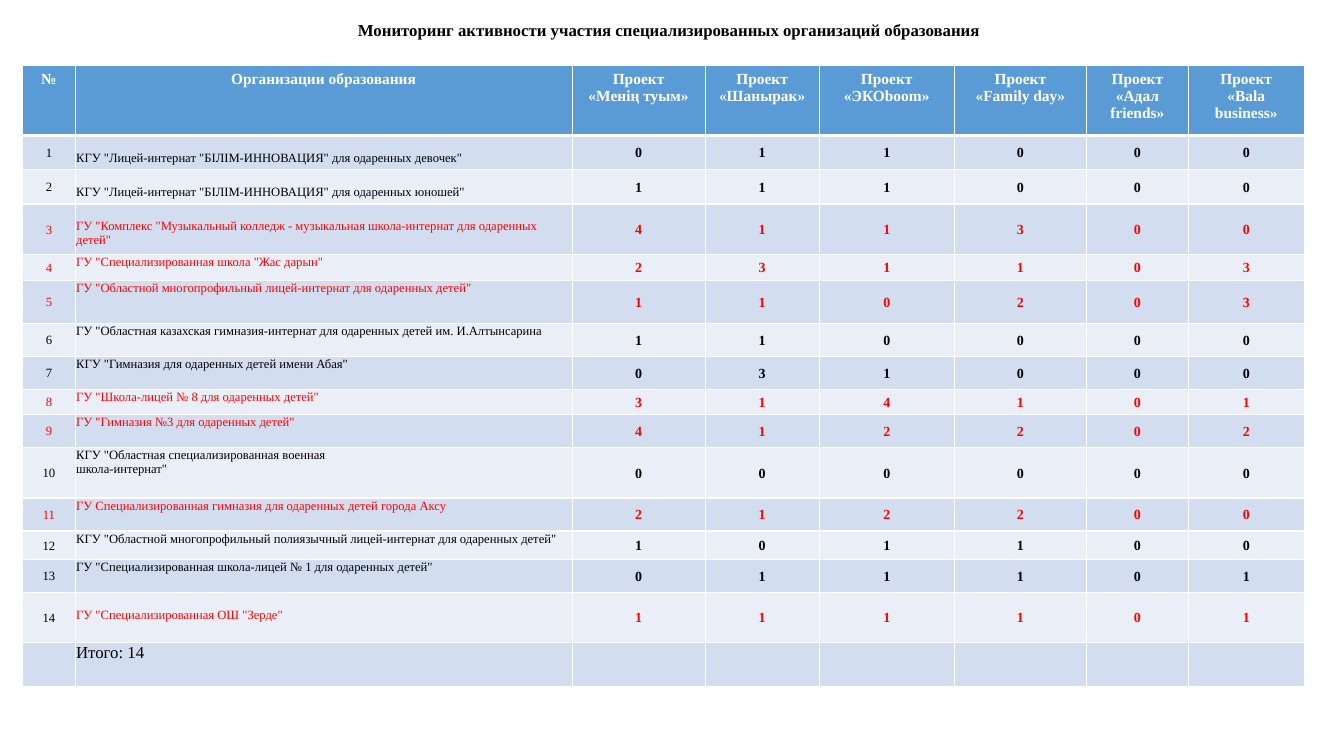
from lxml.etree import SubElement
from pptx import Presentation
from pptx.dml.color import RGBColor
from pptx.enum.text import MSO_ANCHOR, PP_ALIGN
from pptx.oxml.ns import qn
from pptx.util import Pt

FONT = "Times New Roman"
BLACK, RED, WHITE = "000000", "FF0000", "FFFFFF"
HEADER_BLUE, BAND_DARK, BAND_LIGHT = "5B9BD5", "D2DEEF", "EAEFF7"


def style_text(frame, size, color, bold=False, align=PP_ALIGN.CENTER):
    for paragraph in frame.paragraphs:
        paragraph.alignment = align
        paragraph.font.name = FONT
        paragraph.font.size = Pt(size)
        paragraph.font.bold = bold
        paragraph.font.color.rgb = RGBColor.from_string(color)


def style_cell(cell, fill, top=1, bottom=1):
    properties = cell._tc.get_or_add_tcPr()
    for side, width in (("L", 1), ("R", 1), ("T", top), ("B", bottom)):
        line = SubElement(properties, qn(f"a:ln{side}"), w=str(Pt(width)))
        solid = SubElement(line, qn("a:solidFill"))
        SubElement(solid, qn("a:srgbClr"), val=WHITE)
    cell.fill.solid()
    cell.fill.fore_color.rgb = RGBColor.from_string(fill)


headers = [
    "№", "Организации образования", "Проект\n«Менің туым»", "Проект «Шанырак»",
    "Проект «ЭКОboom»", "Проект\n«Family day»", "Проект\n«Адал friends»",
    "Проект\n«Bala business»",
]
column_widths = [37.5, 355, 95, 81.5, 96.5, 94.5, 72.7, 82.8]

# Row height, organization, scores for the six projects
organizations = [
    (24.5, 'КГУ "Лицей-интернат "БІЛІМ-ИННОВАЦИЯ" для одаренных девочек"', "011000"),
    (24.5, 'КГУ "Лицей-интернат "БІЛІМ-ИННОВАЦИЯ" для одаренных юношей"', "111000"),
    (36, 'ГУ "Комплекс "Музыкальный колледж - музыкальная школа-интернат для одаренных детей"', "411300"),
    (18.5, 'ГУ "Специализированная школа "Жас дарын"', "231103"),
    (31, 'ГУ "Областной многопрофильный лицей-интернат для одаренных детей"', "110203"),
    (23.5, 'ГУ "Областная казахская гимназия-интернат для одаренных детей им. И.Алтынсарина', "110000"),
    (23.5, 'КГУ "Гимназия для одаренных детей имени Абая"', "031000"),
    (18, 'ГУ "Школа-лицей № 8 для одаренных детей"', "314101"),
    (23.5, 'ГУ "Гимназия №3 для одаренных детей"', "412202"),
    (36, 'КГУ "Областная специализированная военная\nшкола-интернат"', "000000"),
    (23.5, "ГУ Специализированная гимназия для одаренных детей города Аксу", "212200"),
    (20.5, 'КГУ "Областной многопрофильный полиязычный лицей-интернат для одаренных детей"', "101100"),
    (23.5, 'ГУ "Специализированная школа-лицей № 1 для одаренных детей"', "011101"),
    (36, 'ГУ "Специализированная ОШ "Зерде"', "111101"),
]
red_rows = {3, 4, 5, 8, 9, 11, 14}
lowered_names = {1, 2, 3, 14}
row_heights = [50] + [height for height, _, _ in organizations] + [31]

presentation = Presentation()
presentation.slide_width, presentation.slide_height = Pt(960), Pt(540)
slide = presentation.slides.add_slide(presentation.slide_layouts[6])

# Title
title = slide.shapes.add_textbox(Pt(0), Pt(0), Pt(956), Pt(44.6)).text_frame
title.word_wrap = True
title.vertical_anchor = MSO_ANCHOR.MIDDLE
title.text = "Мониторинг активности участия специализированных организаций образования"
title.paragraphs[0].line_spacing = 0.9
style_text(title, 12, BLACK, bold=True)

# Table grid
table = slide.shapes.add_table(
    len(row_heights), len(headers), Pt(16.2), Pt(46.8),
    Pt(sum(column_widths)), Pt(sum(row_heights))).table
for column, width in zip(table.columns, column_widths):
    column.width = Pt(width)
for row, height in zip(table.rows, row_heights):
    row.height = Pt(height)

# Header row
for column, text in enumerate(headers):
    cell = table.cell(0, column)
    style_cell(cell, HEADER_BLUE, bottom=3)
    cell.text = text
    style_text(cell.text_frame, 11, WHITE, bold=True)

# Organization rows and the total row
rows = [[str(number), name, *scores]
        for number, (_, name, scores) in enumerate(organizations, 1)]
rows.append(["", "Итого: 14"] + [""] * 6)
for number, values in enumerate(rows, 1):
    is_total = number == len(rows)
    color = RED if number in red_rows else BLACK
    for column, text in enumerate(values):
        cell = table.cell(number, column)
        style_cell(cell, BAND_DARK if number % 2 else BAND_LIGHT,
                   top=3 if number == 1 else 1)
        cell.margin_left = cell.margin_right = cell.margin_top = Pt(0.7)
        cell.margin_bottom = Pt(0)
        if not text:
            continue
        cell.text = text
        if column == 1:
            if number in lowered_names:
                cell.margin_top = Pt(11)
            style_text(cell.text_frame, 12 if is_total else 9, color, align=PP_ALIGN.LEFT)
        else:
            cell.vertical_anchor = MSO_ANCHOR.MIDDLE
            if column == 0:
                style_text(cell.text_frame, 9, BLACK if number == 14 else color)
            else:
                style_text(cell.text_frame, 10, color, bold=True)

presentation.save("out.pptx")
